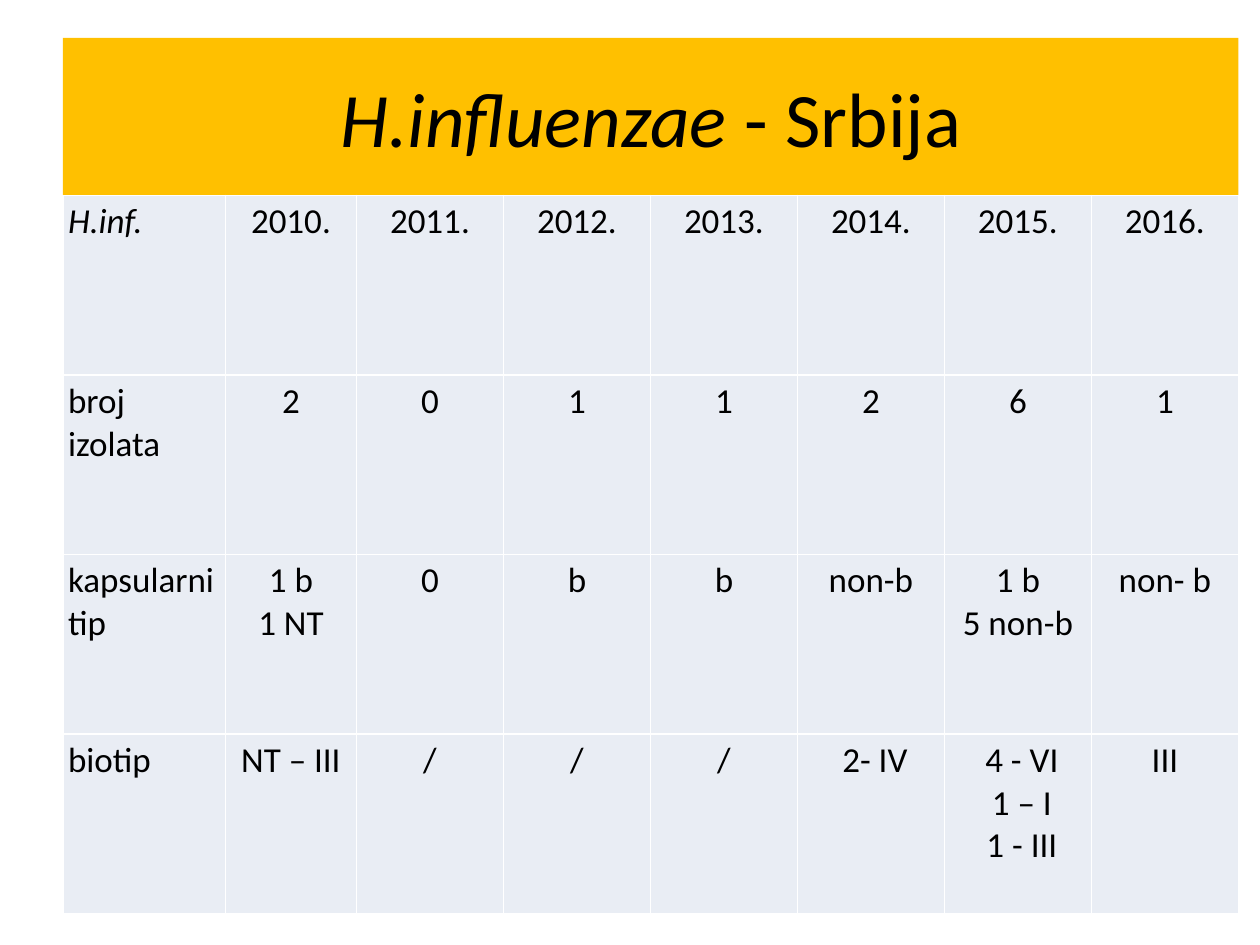
from dataclasses import dataclass

import lxml.etree
import pptx
import pptx.dml.color
import pptx.enum.shapes
import pptx.enum.text
import pptx.oxml.ns
import pptx.util

Inches = pptx.util.Inches
ALIGN = pptx.enum.text.PP_ALIGN
MIDDLE = pptx.enum.text.MSO_ANCHOR.MIDDLE

COLORS = {"band": "FFC000", "cell": "E9EDF4", "rule": "FFFFFF", "text": "000000"}
FONT = "Calibri"
LEFT, WIDTH = 0.5, 9.33
TITLE_TOP, TITLE_HEIGHT = 0.3, 1.25
TABLE_TOP, TABLE_HEIGHT = TITLE_TOP + TITLE_HEIGHT, 5.7
LABEL_WIDTH, FIRST_YEAR_WIDTH = 1.29, 1.04
CELL_FORMAT = {side: Inches(0.04) for side in
               ("margin_left", "margin_right", "margin_top", "margin_bottom")}


@dataclass
class Row:
    label: str
    values: list[str]
    italic_label: bool = False


ROWS = [
    Row("H.inf.", [f"{year}." for year in range(2010, 2017)], italic_label=True),
    Row("broj izolata", ["2", "0", "1", "1", "2", "6", "1"]),
    Row("kapsularni tip", ["1 b\n1 NT", "0", "b", "b", "non-b", "1 b\n5 non-b", "non- b"]),
    Row("biotip", ["NT – III", "/", "/", "/", " 2- IV", " 4 - VI\n 1 – I\n 1 - III", "III"]),
]


def rgb(name: str) -> pptx.dml.color.RGBColor:
    return pptx.dml.color.RGBColor.from_string(COLORS[name])


def format_font(font, size: float, italic: bool = False) -> None:
    values = {"name": FONT, "size": pptx.util.Pt(size), "italic": italic, "bold": False}
    for attribute, value in values.items():
        setattr(font, attribute, value)
    font.color.rgb = rgb("text")


def draw_title(slide) -> None:
    band = slide.shapes.add_shape(
        pptx.enum.shapes.MSO_SHAPE.RECTANGLE,
        *map(Inches, (LEFT, TITLE_TOP, WIDTH, TITLE_HEIGHT)))
    band.shadow.inherit = False
    band.fill.solid()
    band.fill.fore_color.rgb = rgb("band")
    band.line.fill.background()
    band.text_frame.vertical_anchor = MIDDLE
    heading = band.text_frame.paragraphs[0]
    heading.alignment = ALIGN.CENTER
    for words, italic in (("H.influenzae", True), (" - Srbija", False)):
        run = heading.add_run()
        run.text = words
        format_font(run.font, 44, italic)


def add_borders(cell) -> None:
    """Rule all four sides; border elements must come before the cell's fill."""
    properties = cell._tc.get_or_add_tcPr()
    qn = pptx.oxml.ns.qn
    for position, side in enumerate(("a:lnL", "a:lnR", "a:lnT", "a:lnB")):
        line = lxml.etree.Element(qn(side), w=str(pptx.util.Pt(1)))
        fill = lxml.etree.SubElement(line, qn("a:solidFill"))
        lxml.etree.SubElement(fill, qn("a:srgbClr"), val=COLORS["rule"])
        properties.insert(position, line)


def fill_cell(cell, text: str, alignment, italic: bool = False) -> None:
    for attribute, value in CELL_FORMAT.items():
        setattr(cell, attribute, value)
    cell.fill.solid()
    cell.fill.fore_color.rgb = rgb("cell")
    add_borders(cell)
    cell.text_frame.text = text
    for paragraph in cell.text_frame.paragraphs:
        paragraph.alignment = alignment
        for run in paragraph.runs:
            format_font(run.font, 20, italic)


def draw_table(slide, rows: list[Row]) -> None:
    years = len(rows[0].values)
    table = slide.shapes.add_table(
        len(rows), years + 1,
        *map(Inches, (LEFT, TABLE_TOP, WIDTH, TABLE_HEIGHT))).table
    table.first_row = table.horz_banding = False
    year_width = (WIDTH - LABEL_WIDTH - FIRST_YEAR_WIDTH) / (years - 1)
    widths = [LABEL_WIDTH, FIRST_YEAR_WIDTH] + [year_width] * (years - 1)
    for column, width in zip(table.columns, widths):
        column.width = Inches(width)
    for index, row in enumerate(rows):
        table.rows[index].height = Inches(TABLE_HEIGHT / len(rows))
        fill_cell(table.cell(index, 0), row.label, ALIGN.LEFT, row.italic_label)
        for column, value in enumerate(row.values, start=1):
            fill_cell(table.cell(index, column), value, ALIGN.CENTER)


def main() -> None:
    deck = pptx.Presentation()
    deck.slide_width, deck.slide_height = Inches(10), Inches(7.5)
    slide = deck.slides.add_slide(deck.slide_layouts[6])
    draw_title(slide)
    draw_table(slide, ROWS)
    deck.save("out.pptx")


if __name__ == "__main__":
    main()
